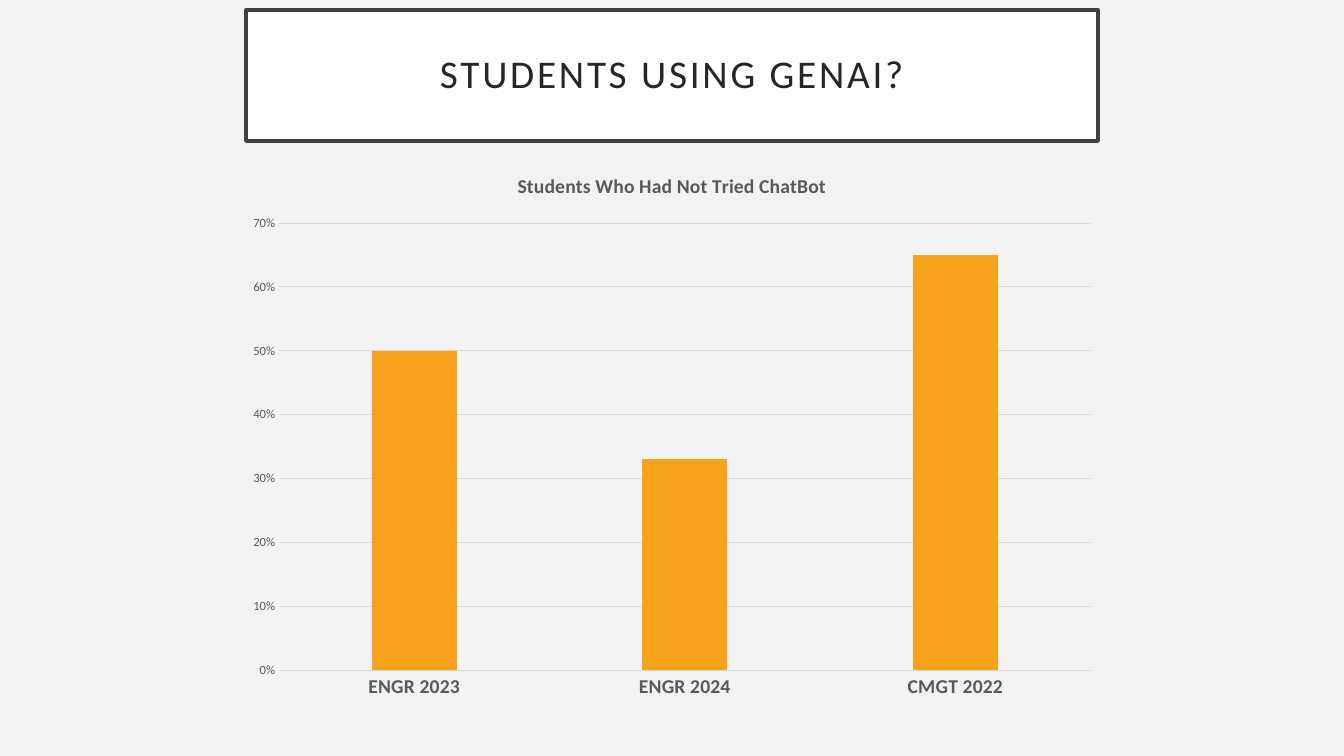
import pptx
import pptx.chart.data
import pptx.dml.color
import pptx.enum.chart
import pptx.enum.text
import pptx.util

RGBColor = pptx.dml.color.RGBColor
BACKGROUND = RGBColor(0xF2, 0xF2, 0xF2)
WHITE = RGBColor(0xFF, 0xFF, 0xFF)
FRAME = RGBColor(0x40, 0x40, 0x40)
HEADING = RGBColor(0x26, 0x26, 0x26)
LABEL = RGBColor(0x59, 0x59, 0x59)
GRID = RGBColor(0xD9, 0xD9, 0xD9)
ORANGE = RGBColor(0xF6, 0xA2, 0x1D)
FONT = "Calibri"
WIDTH = pptx.util.Inches(13.33)
HEIGHT = pptx.util.Inches(7.5)


def centred_box(width_share, top_share, height_share):
    width = int(WIDTH * width_share)
    return (WIDTH - width) // 2, int(HEIGHT * top_share), width, int(HEIGHT * height_share)


def style_font(font, size, color, bold=False):
    font.name = FONT
    font.size = pptx.util.Pt(size)
    font.color.rgb = color
    font.bold = bold


def style_line(line, color, width):
    line.color.rgb = color
    line.width = pptx.util.Pt(width)


def add_heading(slide, box, wording):
    heading = slide.shapes.title
    heading.left, heading.top, heading.width, heading.height = box
    heading.fill.solid()
    heading.fill.fore_color.rgb = WHITE
    style_line(heading.line, FRAME, 2.5)
    frame = heading.text_frame
    frame.word_wrap = True
    frame.auto_size = pptx.enum.text.MSO_AUTO_SIZE.NONE
    frame.vertical_anchor = pptx.enum.text.MSO_ANCHOR.MIDDLE
    inset = pptx.util.Inches(0.2)
    frame.margin_left = frame.margin_right = inset
    frame.margin_top = frame.margin_bottom = inset
    paragraph = frame.paragraphs[0]
    paragraph.alignment = pptx.enum.text.PP_ALIGN.CENTER
    paragraph.line_spacing = 0.9
    run = paragraph.add_run()
    run.text = wording
    style_font(run.font, 28, HEADING)
    run.font._element.set("spc", "200")


def add_usage_chart(slide, box, wording, shares):
    usage = pptx.chart.data.CategoryChartData(number_format="0%")
    usage.categories = list(shares)
    usage.add_series("Series 1", list(shares.values()))
    chart = slide.shapes.add_chart(
        pptx.enum.chart.XL_CHART_TYPE.COLUMN_CLUSTERED, *box, usage).chart
    style_font(chart.font, 10, LABEL)
    chart.has_legend = False

    chart.has_title = True
    chart.chart_title.include_in_layout = False
    caption = chart.chart_title.text_frame.paragraphs[0].add_run()
    caption.text = wording
    style_font(caption.font, 14, LABEL, bold=True)

    plot = chart.plots[0]
    plot.gap_width = 219
    plot.overlap = -27
    plot.vary_by_categories = False
    columns = plot.series[0]
    columns.invert_if_negative = False
    columns.format.fill.solid()
    columns.format.fill.fore_color.rgb = ORANGE

    courses, percent = chart.category_axis, chart.value_axis
    for axis in (courses, percent):
        axis.major_tick_mark = pptx.enum.chart.XL_TICK_MARK.NONE
        axis.minor_tick_mark = pptx.enum.chart.XL_TICK_MARK.NONE
    style_font(courses.tick_labels.font, 14, LABEL, bold=True)
    style_line(courses.format.line, GRID, 0.75)
    style_font(percent.tick_labels.font, 9, LABEL)
    percent.minimum_scale = 0
    percent.maximum_scale = 0.7
    percent.major_unit = 0.1
    percent.tick_labels.number_format = "0%"
    percent.tick_labels.number_format_is_linked = False
    percent.format.line.fill.background()
    percent.has_major_gridlines = True
    style_line(percent.major_gridlines.format.line, GRID, 0.75)


def main():
    deck = pptx.Presentation()
    deck.slide_width, deck.slide_height = WIDTH, HEIGHT
    slide = deck.slides.add_slide(deck.slide_layouts[5])
    slide.background.fill.solid()
    slide.background.fill.fore_color.rgb = BACKGROUND
    add_heading(slide, centred_box(0.634, 0.0133, 0.1733), "STUDENTS USING GENAI?")
    add_usage_chart(
        slide, centred_box(0.649, 0.2013, 0.7373), "Students Who Had Not Tried ChatBot",
        {"ENGR 2023": 0.5, "ENGR 2024": 0.33, "CMGT 2022": 0.65})
    deck.save("out.pptx")


if __name__ == "__main__":
    main()
